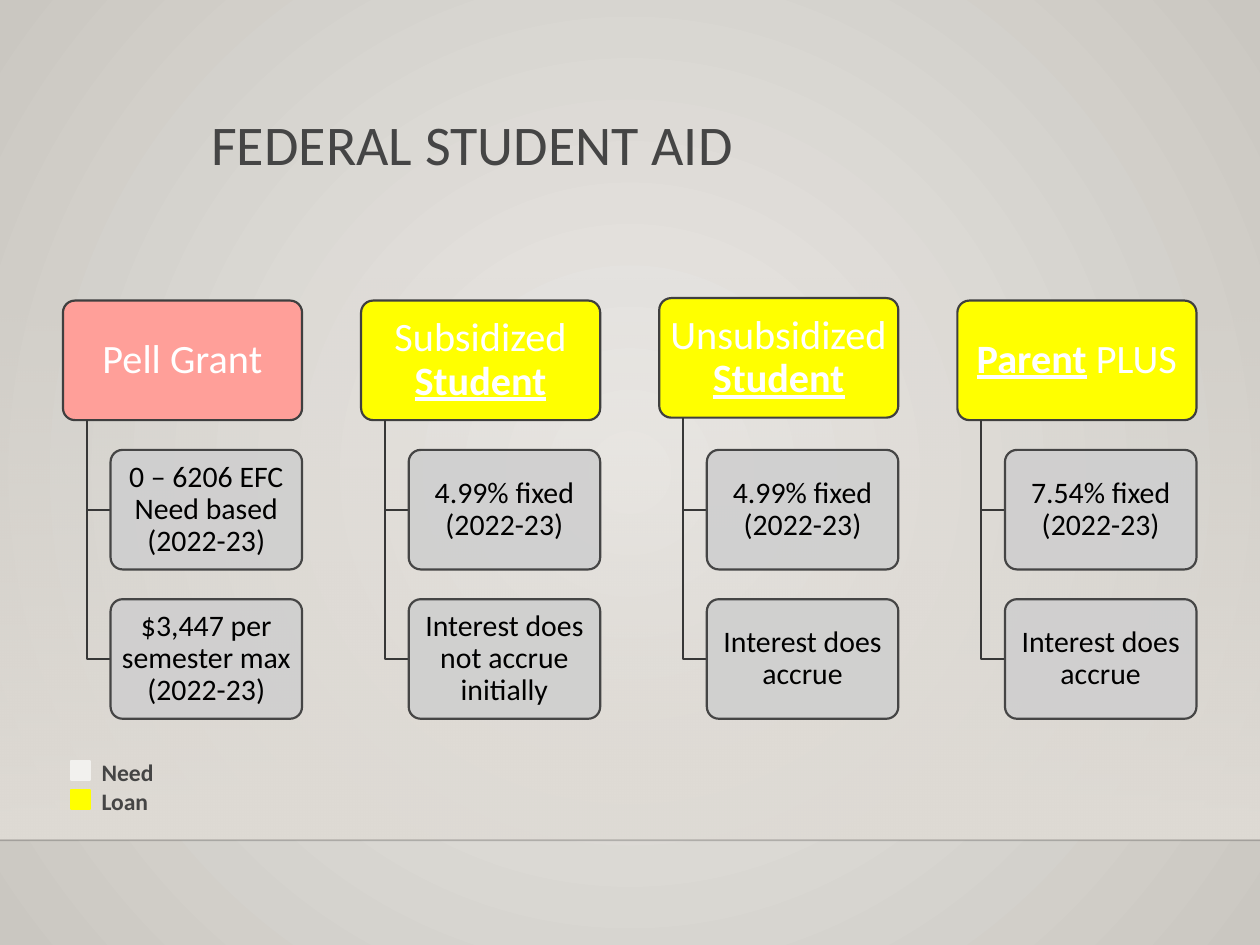
from dataclasses import dataclass

from lxml import etree
from pptx import Presentation
from pptx.dml.color import RGBColor
from pptx.enum.shapes import MSO_CONNECTOR, MSO_SHAPE
from pptx.enum.text import MSO_ANCHOR, PP_ALIGN
from pptx.oxml.ns import qn
from pptx.util import Cm, Pt

RECTANGLE = MSO_SHAPE.RECTANGLE
ROUNDED = MSO_SHAPE.ROUNDED_RECTANGLE
STRAIGHT = MSO_CONNECTOR.STRAIGHT
TOP, MIDDLE = MSO_ANCHOR.TOP, MSO_ANCHOR.MIDDLE
LEFT, CENTER = PP_ALIGN.LEFT, PP_ALIGN.CENTER

PAGE_WIDTH, PAGE_HEIGHT = 25.4, 19.05
FLOOR_TOP = 16.94
COLUMN_LEFT, COLUMN_PITCH = 1.27, 6.01
HEAD_TOP, HEAD_WIDTH, BOX_HEIGHT = 6.06, 4.82, 2.41
ROW_PITCH = 3.01
NODE_INDENT, NODE_WIDTH = 0.96, 3.86
STEM_INDENT = 0.48
LEGEND_TOP, LEGEND_PITCH = 15.34, 0.59


@dataclass(frozen=True)
class Theme:
    font: str = "Calibri"
    title_size: float = 32
    head_size: float = 23
    node_size: float = 17
    legend_size: float = 13.5
    outline: float = 1.25
    text: str = "454545"
    light: str = "FFFFFF"
    dark: str = "000000"
    glow: str = "ECEAE7"
    edge: str = "CAC7C1"
    wall: str = "DFDBD5"
    floor_line: str = "000001"
    head_line: str = "3F3F3F"
    stem: str = "373737"
    node: str = "CFCFCF"
    grant: str = "FF9F99"
    need: str = "F2F1EE"
    loan: str = "FFFF00"


EMPHASIS = {"bold": True, "underline": True}
COLUMNS = [
    (Theme.grant, 0, [("Pell Grant", {})],
     ["0 – 6206 EFC\nNeed based (2022-23)", "$3,447 per semester max (2022-23)"]),
    (Theme.loan, 0, [("Subsidized ", {}), ("Student", EMPHASIS)],
     ["4.99% fixed (2022-23)", "Interest does not accrue initially"]),
    (Theme.loan, 0.05, [("Unsubsidized ", {}), ("Student", EMPHASIS)],
     ["4.99% fixed (2022-23)", "Interest does accrue"]),
    (Theme.loan, 0, [("Parent", EMPHASIS), (" PLUS", {})],
     ["7.54% fixed (2022-23)", "Interest does accrue"]),
]
LEGEND = [("Need", Theme.need), ("Loan", Theme.loan)]


class SlideBuilder:
    def __init__(self, presentation, theme):
        self.theme = theme
        self.slide = presentation.slides.add_slide(presentation.slide_layouts[6])
        self.shapes = self.slide.shapes

    def set_alpha(self, element, percent):
        alpha = etree.SubElement(element, qn("a:alpha"))
        alpha.set("val", str(percent * 1000))

    def gradient(self, fill, colors):
        fill.gradient()
        for stop, color, position in zip(fill.gradient_stops, colors, (0, 1)):
            stop.color.rgb = RGBColor.from_string(color)
            stop.position = position

    def background(self):
        self.gradient(self.slide.background.fill, (self.theme.glow, self.theme.edge))
        gradient = self.slide.element.xpath(".//a:gradFill")[0]
        for linear in gradient.findall(qn("a:lin")):
            gradient.remove(linear)
        circle = etree.SubElement(gradient, qn("a:path"))
        circle.set("path", "circle")
        center = etree.SubElement(circle, qn("a:fillToRect"))
        for side in "ltrb":
            center.set(side, "50000")

    def wall(self, top, height):
        shape = self.shapes.add_shape(RECTANGLE, 0, Cm(top), Cm(PAGE_WIDTH), Cm(height))
        shape.shadow.inherit = False
        shape.line.fill.background()
        self.gradient(shape.fill, (self.theme.wall, self.theme.wall))
        shape.fill.gradient_angle = 270
        self.set_alpha(shape.element.xpath(".//a:gs/a:srgbClr")[0], 0)

    def floor_line(self, top):
        line = self.shapes.add_connector(STRAIGHT, 0, Cm(top), Cm(PAGE_WIDTH), Cm(top))
        line.line.width = Pt(1)
        line.line.color.rgb = RGBColor.from_string(self.theme.floor_line)
        properties = line.element.spPr
        self.set_alpha(properties.xpath(".//a:srgbClr")[0], 20)
        etree.SubElement(properties, qn("a:effectLst"))

    def set_text(self, shape, runs, size, color, alignment=LEFT, anchor=TOP, insets=None, spacing=0.9):
        frame = shape.text_frame
        values = {"word_wrap": True, "vertical_anchor": anchor}
        if insets:
            side, end = map(Cm, insets)
            values.update(margin_left=side, margin_right=side, margin_top=end, margin_bottom=end)
        for name, value in values.items():
            setattr(frame, name, value)
        paragraph = frame.paragraphs[0]
        paragraph.alignment = alignment
        paragraph.line_spacing = spacing
        for text, emphasis in runs:
            for index, part in enumerate(text.split("\n")):
                if index:
                    paragraph.add_line_break()
                run = paragraph.add_run()
                run.text = part
                formats = {"name": self.theme.font, "size": Pt(size), **emphasis}
                for name, value in formats.items():
                    setattr(run.font, name, value)
                run.font.color.rgb = RGBColor.from_string(color)

    def label(self, left, top, width, height, runs, size, spacing):
        box = self.shapes.add_textbox(Cm(left), Cm(top), Cm(width), Cm(height))
        self.set_text(box, runs, size, self.theme.text, spacing=spacing)

    def box(self, kind, left, top, width, height, fill, line):
        shape = self.shapes.add_shape(kind, Cm(left), Cm(top), Cm(width), Cm(height))
        shape.shadow.inherit = False
        shape.fill.solid()
        shape.fill.fore_color.rgb = RGBColor.from_string(fill)
        shape.line.color.rgb = RGBColor.from_string(line)
        shape.line.width = Pt(self.theme.outline)
        if kind == ROUNDED:
            shape.adjustments[0] = 0.1
        return shape

    def head(self, left, top, fill, runs):
        shape = self.box(ROUNDED, left, top, HEAD_WIDTH, BOX_HEIGHT, fill, self.theme.head_line)
        self.set_text(shape, runs, self.theme.head_size, self.theme.light,
                      CENTER, MIDDLE, (0.13, 0.08))

    def node(self, left, top, text):
        shape = self.box(ROUNDED, left, top, NODE_WIDTH, BOX_HEIGHT, self.theme.node, self.theme.text)
        self.set_alpha(shape.element.xpath("./p:spPr/a:solidFill/a:srgbClr")[0], 90)
        self.set_text(shape, [(text, {})], self.theme.node_size, self.theme.dark,
                      CENTER, MIDDLE, (0.1, 0.05))

    def elbow(self, left, top, right, bottom):
        builder = self.shapes.build_freeform(Cm(left), Cm(top))
        builder.add_line_segments([(Cm(left), Cm(bottom)), (Cm(right), Cm(bottom))], close=False)
        shape = builder.convert_to_shape()
        shape.shadow.inherit = False
        shape.fill.background()
        shape.line.color.rgb = RGBColor.from_string(self.theme.stem)
        shape.line.width = Pt(self.theme.outline)

    def column(self, left, top, fill, heading, details):
        self.head(left, top, fill, heading)
        for row, text in enumerate(details, start=1):
            node_top = HEAD_TOP + row * ROW_PITCH
            self.elbow(left + STEM_INDENT, top + BOX_HEIGHT,
                       left + NODE_INDENT, node_top + BOX_HEIGHT / 2)
            self.node(left + NODE_INDENT, node_top, text)

    def legend_entry(self, top, text, color):
        self.box(RECTANGLE, 1.43, top, 0.38, 0.38, color, color)
        self.label(1.8, top - 0.19, 1.75, 0.84, [(text, {"bold": True})],
                   self.theme.legend_size, 1.0)


def main():
    presentation = Presentation()
    presentation.slide_width, presentation.slide_height = Cm(PAGE_WIDTH), Cm(PAGE_HEIGHT)
    theme = Theme()
    builder = SlideBuilder(presentation, theme)
    builder.background()
    builder.wall(5.59, 11.33)
    builder.floor_line(FLOOR_TOP)
    builder.label(4.01, 2.24, 18.26, 2.92, [("FEDERAL STUDENT AID", {})], theme.title_size, 0.9)
    for index, (fill, lift, heading, details) in enumerate(COLUMNS):
        left = COLUMN_LEFT + index * COLUMN_PITCH
        builder.column(left, HEAD_TOP - lift, fill, heading, details)
    for index, (text, color) in enumerate(LEGEND):
        builder.legend_entry(LEGEND_TOP + index * LEGEND_PITCH, text, color)
    presentation.save("out.pptx")


if __name__ == "__main__":
    main()
